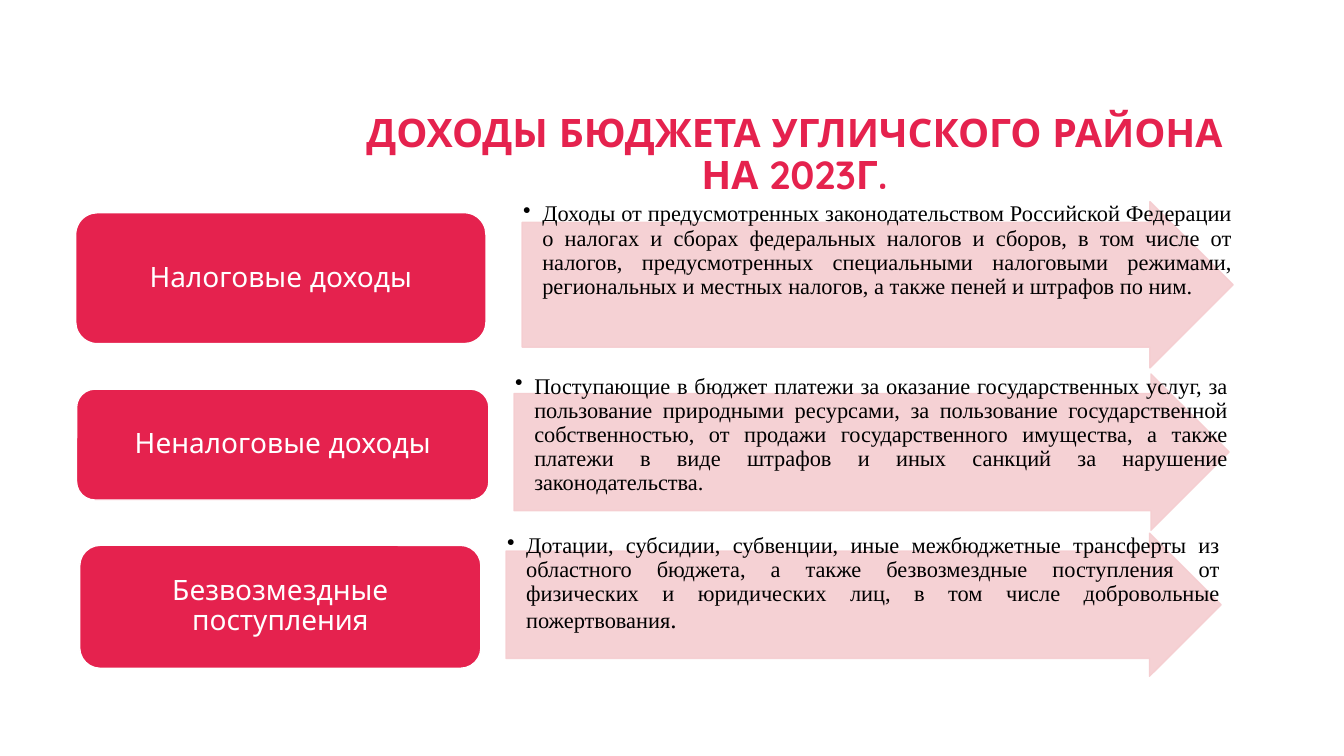
"""Builds a slide on the three kinds of income in a district budget."""
from lxml import etree
from pptx import Presentation
from pptx import util as u
from pptx.dml.color import RGBColor
from pptx.enum import shapes, text
from pptx.oxml.ns import qn

WIDTH, HEIGHT = u.Inches(13.33), u.Inches(7.5)
COLORS = {"accent": "E5224E", "arrow": "F5CDD0", "white": "FFFFFF", "black": "000000"}
HEADING_FONT, BODY_FONT = "Quicksand", "Times New Roman"
ARROW_OPACITY = 90
TITLE = "ДОХОДЫ БЮДЖЕТА УГЛИЧСКОГО РАЙОНА\vНА 2023Г."
TITLE_AREA = (23.78, 11.2, 70.67, 18.8)

INCOMES = [
    {
        "name": "Налоговые доходы",
        "label_area": (5.63, 28.13, 30.53, 17.33),
        "arrow_area": (38.85, 26.67, 52.9, 22),
        "runs": [("Доходы от предусмотренных законодательством Российской Федерации о налогах "
                  "и сборах федеральных налогов и сборов, в том числе от налогов, "
                  "предусмотренных специальными налоговыми режимами, региональных и местных "
                  "налогов, а также пеней и штрафов по ним.", 16)],
    },
    {
        "name": "Неналоговые доходы",
        "label_area": (5.7, 51.47, 30.68, 14.67),
        "arrow_area": (38.25, 49.47, 53.2, 20.67),
        "runs": [("Поступающие в бюджет платежи за оказание государственных услуг, за "
                  "пользование природными ресурсами, за пользование государственной "
                  "собственностью, от продажи государственного имущества, а также платежи "
                  "в виде штрафов и иных санкций за нарушение законодательства.", 16)],
    },
    {
        "name": "Безвозмездные поступления",
        "label_area": (5.93, 72.13, 29.85, 16.27),
        "arrow_area": (37.65, 70.53, 53.2, 18.93),
        "runs": [("Дотации, субсидии, субвенции, иные межбюджетные трансферты из областного "
                  "бюджета, а также безвозмездные поступления от физических и юридических "
                  "лиц, в том числе добровольные пожертвования", 16), (".", 18)],
    },
]


def place(area):
    """Turn left, top, width and height in percent of the slide into lengths."""
    left, top, width, height = (share / 100 for share in area)
    return (u.Emu(int(WIDTH * left)), u.Emu(int(HEIGHT * top)),
            u.Emu(int(WIDTH * width)), u.Emu(int(HEIGHT * height)))


def color(name):
    """Look up a named colour."""
    return RGBColor.from_string(COLORS[name])


def style_font(font, name, size, color_name, bold=False):
    """Set face, size, colour and weight."""
    font.name, font.size, font.bold = name, u.Pt(size), bold
    font.color.rgb = color(color_name)


def prepare_frame(frame, anchor, side, end):
    """Wrap the text and set its anchor and insets in inches."""
    frame.word_wrap = True
    frame.vertical_anchor = anchor
    frame.margin_left = frame.margin_right = u.Inches(side)
    frame.margin_top = frame.margin_bottom = u.Inches(end)


def write_centered(frame, words, size, color_name, bold=False):
    """Write one centred paragraph in the heading font."""
    paragraph = frame.paragraphs[0]
    paragraph.text = words
    paragraph.alignment = text.PP_ALIGN.CENTER
    paragraph.line_spacing = 0.9
    for run in paragraph.runs:
        style_font(run.font, HEADING_FONT, size, color_name, bold)


def add_preset(slide, kind, area, fill, line):
    """Add a flat preset shape with a thin outline."""
    shape = slide.shapes.add_shape(kind, *place(area))
    shape.shadow.inherit = False
    shape.fill.solid()
    shape.fill.fore_color.rgb = color(fill)
    shape.line.color.rgb = color(line)
    shape.line.width = u.Pt(1)
    return shape


def add_title(slide):
    """Add the slide heading."""
    frame = slide.shapes.add_textbox(*place(TITLE_AREA)).text_frame
    prepare_frame(frame, text.MSO_ANCHOR.MIDDLE, 0.1, 0.05)
    write_centered(frame, TITLE, 28, "accent", bold=True)


def add_arrow(slide, area):
    """Add a slightly transparent wide arrow."""
    arrow = add_preset(slide, shapes.MSO_SHAPE.RIGHT_ARROW, area, "arrow", "arrow")
    arrow.adjustments[0], arrow.adjustments[1] = 0.75, 0.5
    for shade in arrow.element.spPr.iter(qn("a:srgbClr")):
        etree.SubElement(shade, qn("a:alpha"), val=str(ARROW_OPACITY * 1000))


def add_description(slide, area, runs):
    """Add a justified bullet text over the arrow."""
    frame = slide.shapes.add_textbox(*place(area)).text_frame
    prepare_frame(frame, text.MSO_ANCHOR.TOP, 0.01, 0.01)
    paragraph = frame.paragraphs[0]
    paragraph.level = 1
    paragraph.alignment = text.PP_ALIGN.JUSTIFY
    paragraph.line_spacing = 0.9
    properties = paragraph._p.get_or_add_pPr()
    indent = u.Inches(0.19)
    properties.set("marL", str(indent))
    properties.set("indent", str(-indent))
    etree.SubElement(properties, qn("a:buChar"), char="•")
    for words, size in runs:
        run = paragraph.add_run()
        run.text = words
        style_font(run.font, BODY_FONT, size, "black")


def add_label(slide, area, name):
    """Add a rounded box that names the income."""
    label = add_preset(slide, shapes.MSO_SHAPE.ROUNDED_RECTANGLE, area, "accent", "white")
    prepare_frame(label.text_frame, text.MSO_ANCHOR.MIDDLE, 0.08, 0.04)
    write_centered(label.text_frame, name, 20, "white")


def main():
    """Build and save the presentation."""
    presentation = Presentation()
    presentation.slide_width, presentation.slide_height = WIDTH, HEIGHT
    slide = presentation.slides.add_slide(presentation.slide_layouts[6])
    add_title(slide)
    for income in INCOMES:
        add_arrow(slide, income["arrow_area"])
        add_description(slide, income["arrow_area"], income["runs"])
        add_label(slide, income["label_area"], income["name"])
    presentation.save("out.pptx")


if __name__ == "__main__":
    main()
